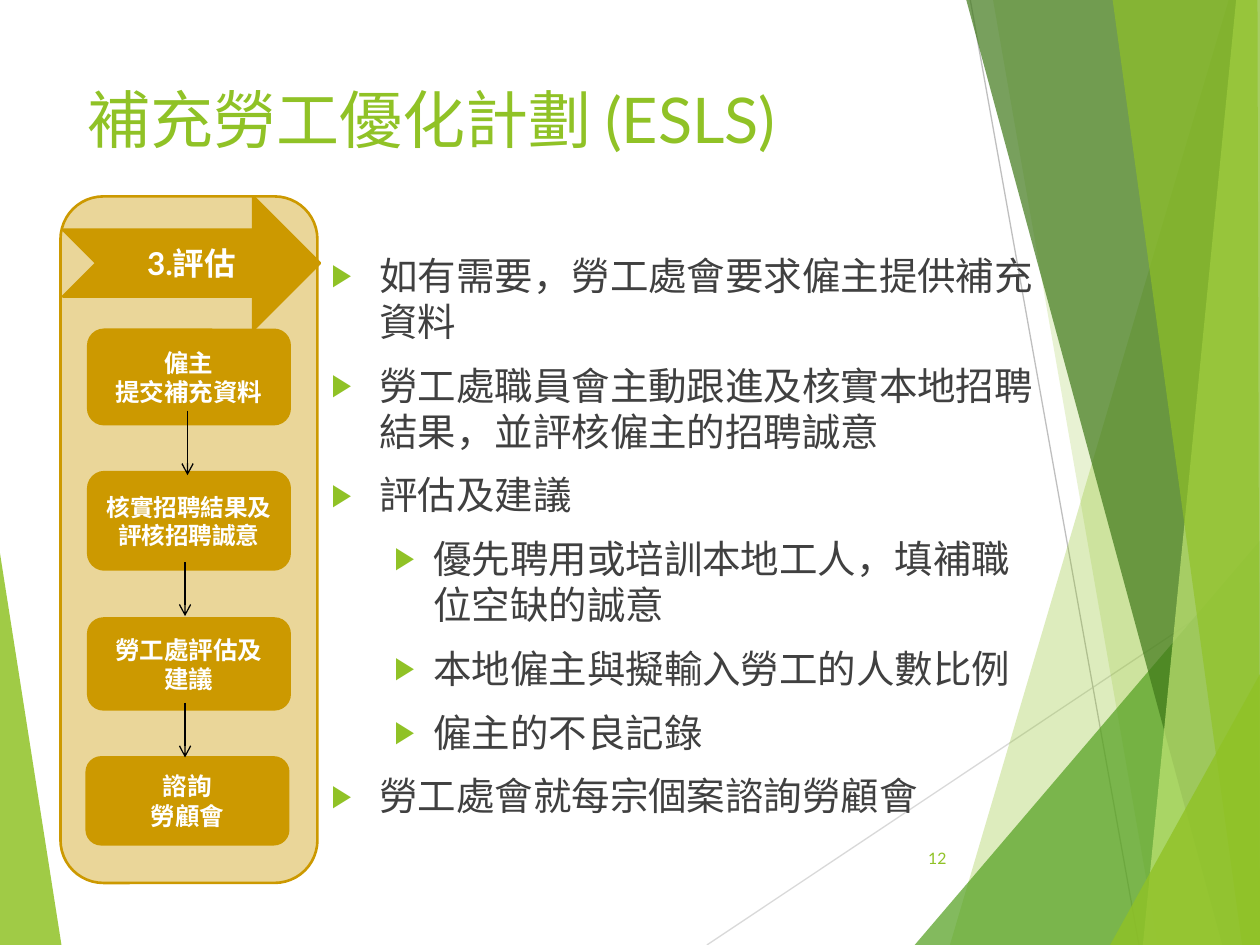
"""Build the ESLS slide: an assessment flow beside its explanatory bullets."""
from lxml.etree import SubElement
from pptx import Presentation
from pptx.dml.color import RGBColor
from pptx.enum.shapes import MSO_CONNECTOR, MSO_SHAPE
from pptx.enum.text import MSO_ANCHOR, MSO_AUTO_SIZE, PP_ALIGN
from pptx.oxml.ns import qn
from pptx.util import Cm, Pt

THEME = {
    "green": "90C226", "leaf": "54A021", "forest": "3F7819", "lime": "C0E474",
    "gold": "CC9900", "white": "FFFFFF", "ink": "404040", "black": "000000",
    "pale": "D9D9D9", "grey": "BFBFBF",
    "heading_font": "Lato", "body_font": "Arial",
    "title": 36, "stage": 18, "step": 14, "tight_step": 13.5, "body": 22, "number": 9,
}
WIDTH, HEIGHT = 25.4, 19.05

TITLE = "補充勞工優化計劃 (ESLS)"
STAGE = "3.評估"
PAGE_NUMBER = "12"
STEPS = [
    (["僱主", "提交補充資料"], 1.78, 6.65, 1.9, "step"),
    (["核實招聘結果及評核招聘誠意"], 1.78, 9.52, 1.96, "tight_step"),
    (["勞工處評估及建議"], 1.78, 12.47, 1.83, "step"),
    (["諮詢", "勞顧會"], 1.75, 15.27, 1.75, "step"),
]
STEP_ARROWS = [(3.78, 8.28, 9.58), (3.73, 11.33, 12.42), (3.73, 14.17, 15.27)]
POINTS = [
    (0, "如有需要，勞工處會要求僱主提供補充資料"),
    (0, "勞工處職員會主動跟進及核實本地招聘結果，並評核僱主的招聘誠意"),
    (0, "評估及建議"),
    (1, "優先聘用或培訓本地工人，填補職位空缺的誠意"),
    (1, "本地僱主與擬輸入勞工的人數比例"),
    (1, "僱主的不良記錄"),
    (0, "勞工處會就每宗個案諮詢勞顧會"),
]
POINT_INDENTS = [(0.97, -0.97), (2.06, -0.79)]

BACK_LINES = [
    ((14.25, HEIGHT), (WIDTH, 11.61), "pale"),
    ((19.56, 0), (22.96, HEIGHT), "grey"),
]
LOWER_RIGHT, UPPER_RIGHT = (WIDTH, HEIGHT), (WIDTH, 0)
FACETS = [
    ("green", 85, [(0, 11.15), (1.24, HEIGHT), (0, HEIGHT)]),
    ("green", 30, [(24.77, 0), (19.15, HEIGHT), LOWER_RIGHT, UPPER_RIGHT]),
    ("green", 20, [(20.02, 0), (23.34, HEIGHT), LOWER_RIGHT, UPPER_RIGHT]),
    ("leaf", 72, [(18.44, HEIGHT), (WIDTH, 10.9), LOWER_RIGHT]),
    ("forest", 70, [(19.48, 0), (24.64, HEIGHT), LOWER_RIGHT, UPPER_RIGHT]),
    ("lime", 70, [(24.92, 0), (23.04, HEIGHT), LOWER_RIGHT, UPPER_RIGHT]),
    ("green", 65, [(22.43, 0), (25.04, HEIGHT), LOWER_RIGHT, (25.35, 0)]),
    ("green", 80, [(22.38, HEIGHT), (WIDTH, 13.59), LOWER_RIGHT]),
]


def color(name):
    return RGBColor.from_string(THEME[name])


def write_text(frame, lines, size, ink, font="heading_font", bold=False,
               align=PP_ALIGN.LEFT, anchor=MSO_ANCHOR.MIDDLE, before=0):
    frame.word_wrap = True
    frame.auto_size = MSO_AUTO_SIZE.NONE
    frame.vertical_anchor = anchor
    for index, line in enumerate(lines):
        paragraph = frame.add_paragraph() if index else frame.paragraphs[0]
        paragraph.alignment = align
        paragraph.space_before = Pt(before)
        run = paragraph.add_run()
        run.text = line
        run.font.name = THEME[font]
        run.font.size = Pt(THEME[size])
        run.font.bold = bold
        run.font.color.rgb = color(ink)


def add_bullet(paragraph, level):
    paragraph.level = level
    margin, indent = POINT_INDENTS[level]
    properties = paragraph._p.get_or_add_pPr()
    properties.set("marL", str(Cm(margin)))
    properties.set("indent", str(Cm(indent)))
    tint = SubElement(properties, qn("a:buClr"))
    SubElement(tint, qn("a:srgbClr"), val=THEME["green"])
    SubElement(properties, qn("a:buSzPct"), val="80000")
    SubElement(properties, qn("a:buFont"), typeface=THEME["body_font"])
    SubElement(properties, qn("a:buChar"), char="▶")


def paint(shape, fill, opacity=100, outline=None):
    shape.shadow.inherit = False
    shape.fill.solid()
    shape.fill.fore_color.rgb = color(fill)
    if opacity < 100:
        tint = shape._element.spPr.find(qn("a:solidFill"))[0]
        SubElement(tint, qn("a:alpha"), val=str(opacity * 1000))
    if outline:
        shape.line.color.rgb = color(outline)
        shape.line.width = Pt(1.5)
    else:
        shape.line.fill.background()


def add_line(shapes, start, end, ink, arrow=False):
    line = shapes.add_connector(MSO_CONNECTOR.STRAIGHT, *map(Cm, start + end))
    line.line.color.rgb = color(ink)
    line.line.width = Pt(0.75)
    if arrow:
        SubElement(line.line._get_or_add_ln(), qn("a:tailEnd"), type="arrow")
    SubElement(line._element.spPr, qn("a:effectLst"))


def add_facet(shapes, fill, opacity, corners):
    points = [(Cm(x), Cm(y)) for x, y in corners]
    outline = shapes.build_freeform(*points[0])
    outline.add_line_segments(points[1:], close=True)
    paint(outline.convert_to_shape(), fill, opacity)


def add_block(shapes, kind, left, top, width, height, opacity=100):
    block = shapes.add_shape(kind, Cm(left), Cm(top), Cm(width), Cm(height))
    paint(block, "gold", opacity, outline="gold")
    return block.text_frame


def add_flow(shapes):
    add_block(shapes, MSO_SHAPE.ROUNDED_RECTANGLE, 1.22, 3.96, 5.18, 13.84, opacity=40)
    label = dict(ink="white", bold=True, align=PP_ALIGN.CENTER)
    stage = add_block(shapes, MSO_SHAPE.NOTCHED_RIGHT_ARROW, 1.27, 3.96, 5.18, 2.69)
    write_text(stage, [STAGE], "stage", **label)
    for lines, left, top, height, size in STEPS:
        step = add_block(shapes, MSO_SHAPE.ROUNDED_RECTANGLE, left, top, 4.06, height)
        write_text(step, lines, size, **label)
    for x, top, bottom in STEP_ARROWS:
        add_line(shapes, (x, top), (x, bottom), "black", arrow=True)


def main():
    deck = Presentation()
    deck.slide_width, deck.slide_height = Cm(WIDTH), Cm(HEIGHT)
    shapes = deck.slides.add_slide(deck.slide_layouts[5]).shapes

    title = shapes.title
    title.left, title.top, title.width, title.height = map(Cm, (1.5, 1.47, 21.34, 1.83))
    write_text(title.text_frame, [TITLE], "title", "green")

    add_facet(shapes, *FACETS[0])
    for start, end, ink in BACK_LINES:
        add_line(shapes, start, end, ink)
    for facet in FACETS[1:]:
        add_facet(shapes, *facet)

    add_flow(shapes)

    points = shapes.add_textbox(Cm(6.43), Cm(4.95), Cm(14.86), Cm(12.19)).text_frame
    write_text(points, [text for _, text in POINTS], "body", "ink",
               font="body_font", anchor=MSO_ANCHOR.TOP, before=10)
    for paragraph, (level, _) in zip(points.paragraphs, POINTS):
        add_bullet(paragraph, level)

    number = shapes.add_textbox(Cm(17.91), Cm(16.79), Cm(1.42), Cm(1.02)).text_frame
    write_text(number, [PAGE_NUMBER], "number", "green", align=PP_ALIGN.RIGHT)
    deck.save("out.pptx")


if __name__ == "__main__":
    main()
